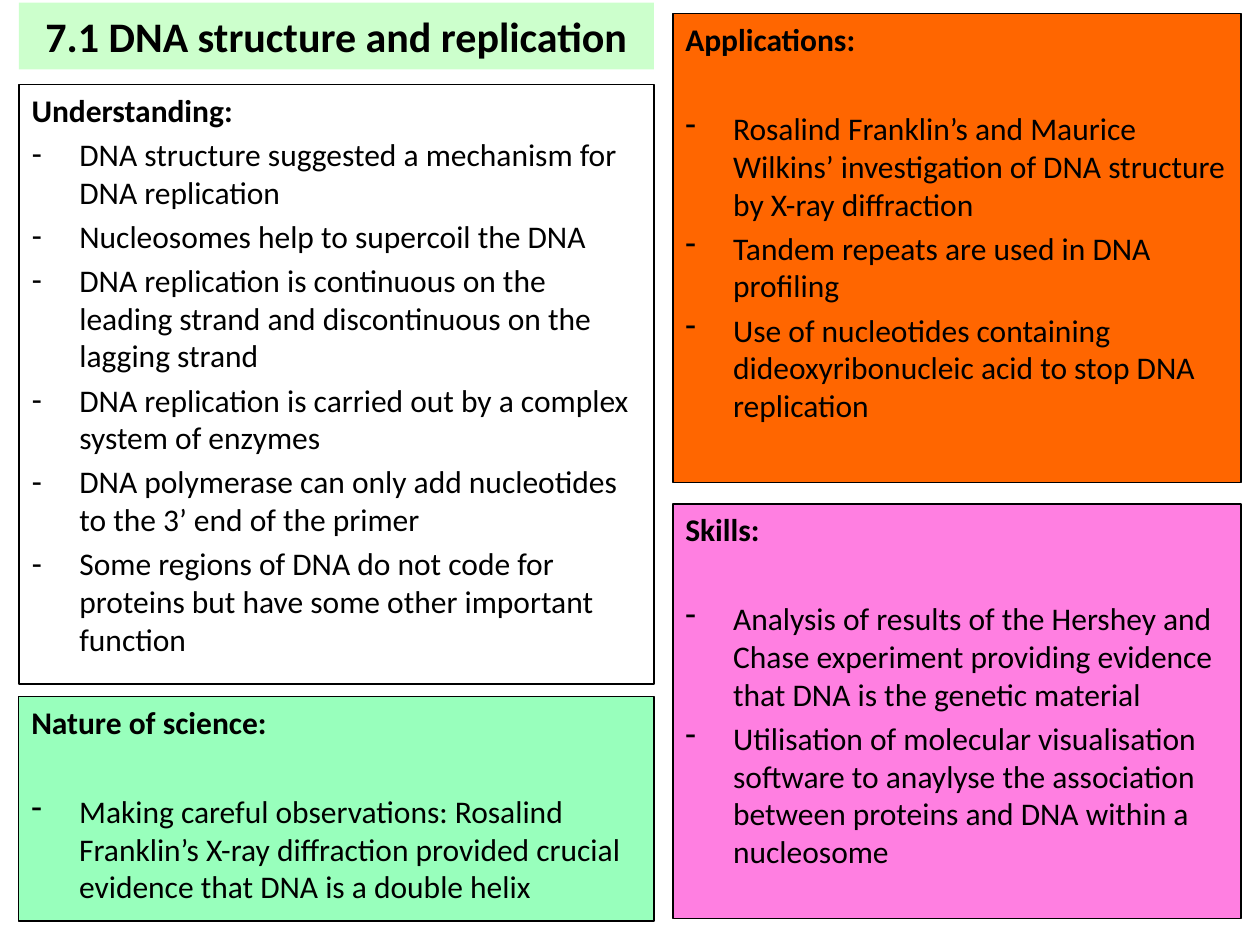
from lxml import etree
from pptx import Presentation
from pptx.dml.color import RGBColor
from pptx.enum.text import MSO_ANCHOR, MSO_AUTO_SIZE, PP_ALIGN
from pptx.oxml.ns import qn
from pptx.util import Inches, Pt

TOP = MSO_ANCHOR.TOP
MIDDLE = MSO_ANCHOR.MIDDLE
NO_FIT = MSO_AUTO_SIZE.NONE
LEFT = PP_ALIGN.LEFT
CENTER = PP_ALIGN.CENTER

FONT = "Calibri"
BLACK = "000000"
LEFT_X, LEFT_W = 0.15, 5.04
RIGHT_X, RIGHT_W = 5.34, 4.51
INDENT = 0.38
GAP = 3.6
HEAD_GAP = 25.6

UNDERSTANDING = [
    "DNA structure suggested a mechanism for DNA replication",
    "Nucleosomes help to supercoil the DNA",
    "DNA replication is continuous on the leading strand and discontinuous on the lagging strand",
    "DNA replication is carried out by a complex system of enzymes",
    "DNA polymerase can only add nucleotides to the 3’ end of the primer",
    "Some regions of DNA do not code for proteins but have some other important function",
]
PANELS = [
    (RIGHT_X, 0.11, RIGHT_W, 3.72, "FF6600", "Applications:", [
        "Rosalind Franklin’s and Maurice Wilkins’ investigation of DNA structure by X-ray diffraction",
        "Tandem repeats are used in DNA profiling",
        "Use of nucleotides containing dideoxyribonucleic acid to stop DNA replication",
    ]),
    (RIGHT_X, 4, RIGHT_W, 3.29, "FF7FE1", "Skills:", [
        "Analysis of results of the Hershey and Chase experiment providing evidence that DNA is the genetic material",
        "Utilisation of molecular visualisation software to anaylyse the association between proteins and DNA within a nucleosome",
    ]),
    (LEFT_X, 5.53, LEFT_W, 1.78, "98FFBC", "Nature of science:", [
        "Making careful observations: Rosalind Franklin’s X-ray diffraction provided crucial evidence that DNA is a double helix",
    ]),
]


def color(text):
    return RGBColor.from_string(text)


def place(shape, x, y, w, h):
    shape.left, shape.top = Inches(x), Inches(y)
    shape.width, shape.height = Inches(w), Inches(h)


def paint(shape, fill):
    shape.fill.solid()
    shape.fill.fore_color.rgb = color(fill)


def border(shape):
    shape.line.color.rgb = color(BLACK)
    shape.line.width = Pt(0.75)


def set_frame(shape, anchor):
    frame = shape.text_frame
    frame.word_wrap = True
    frame.auto_size = NO_FIT
    frame.vertical_anchor = anchor
    return frame


def style(para, size, bold, align):
    para.alignment = align
    for run in para.runs:
        run.font.name = FONT
        run.font.size = Pt(size)
        run.font.bold = bold
        run.font.color.rgb = color(BLACK)


def set_bullet(para, dash):
    props = para._p.get_or_add_pPr()
    depth = Inches(INDENT) if dash else 0
    props.set("marL", str(depth))
    props.set("indent", str(-depth))
    if dash:
        etree.SubElement(props, qn("a:buChar")).set("char", "-")
    else:
        etree.SubElement(props, qn("a:buNone"))


def fill_list(shape, head, items, after=0):
    frame = set_frame(shape, TOP)
    frame.text = "\n".join([head, *items])
    for i, para in enumerate(frame.paragraphs):
        first = i == 0
        style(para, 18, first, LEFT)
        para.space_before = Pt(GAP)
        para.space_after = Pt(after if first else 0)
        set_bullet(para, not first)
    border(shape)


def add_title(slide):
    title = slide.shapes.title
    place(title, LEFT_X, 0.02, LEFT_W, 0.53)
    paint(title, "CCFFCC")
    frame = set_frame(title, MIDDLE)
    frame.text = "7.1 DNA structure and replication"
    style(frame.paragraphs[0], 24, True, CENTER)


def add_body(slide):
    body = slide.placeholders[1]
    place(body, LEFT_X, 0.67, LEFT_W, 4.76)
    fill_list(body, "Understanding:", UNDERSTANDING)


def add_panel(slide, x, y, w, h, fill, head, items):
    box = slide.shapes.add_textbox(Inches(x), Inches(y), Inches(w), Inches(h))
    paint(box, fill)
    fill_list(box, head, items, HEAD_GAP)


def main():
    deck = Presentation()
    deck.slide_width, deck.slide_height = Inches(10), Inches(7.5)
    slide = deck.slides.add_slide(deck.slide_layouts[1])
    add_title(slide)
    add_body(slide)
    for panel in PANELS:
        add_panel(slide, *panel)
    deck.save("out.pptx")


if __name__ == "__main__":
    main()
